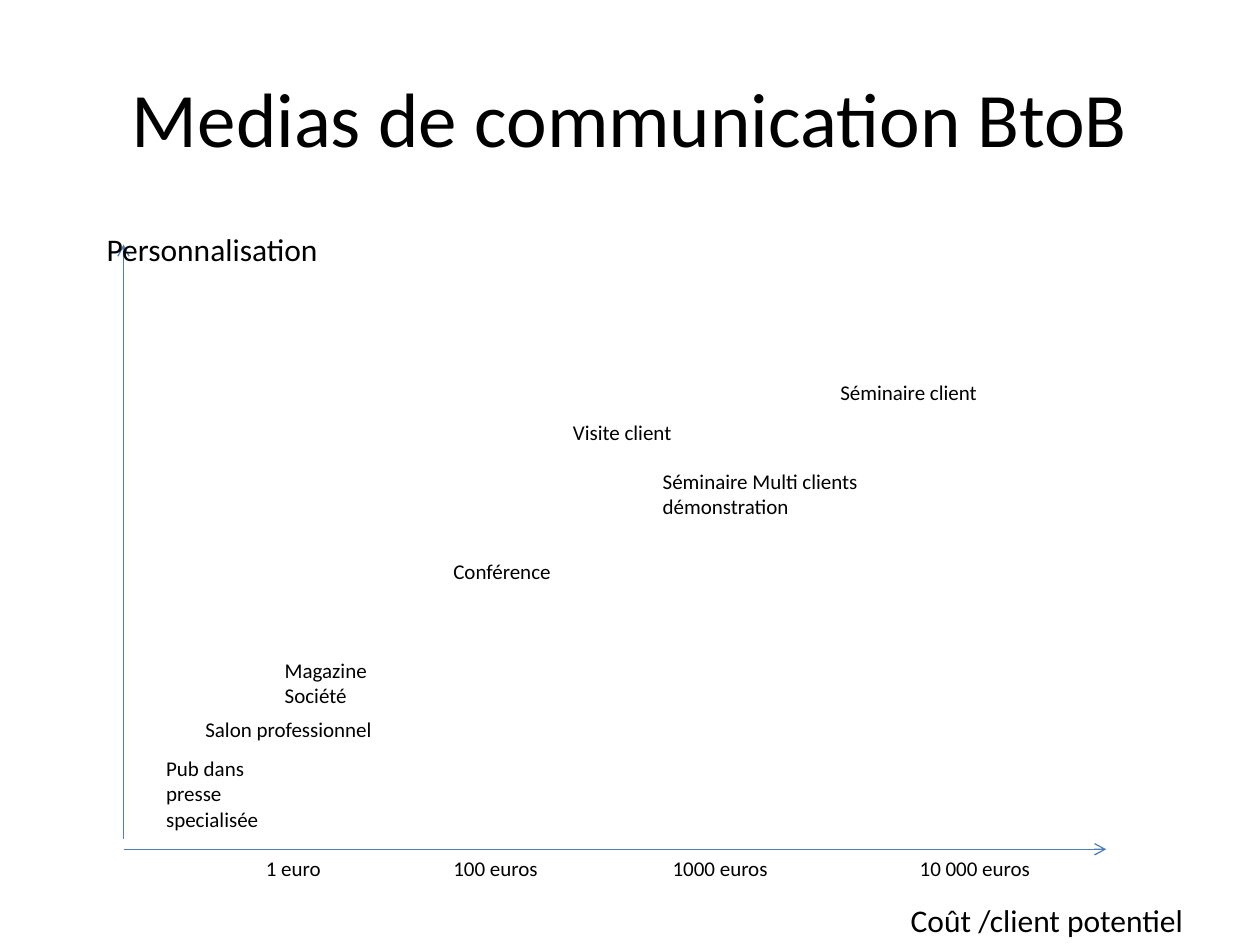
from lxml.etree import SubElement
from pptx import Presentation
from pptx.dml.color import RGBColor
from pptx.enum.shapes import MSO_CONNECTOR as Link
from pptx.enum.text import MSO_ANCHOR as Anchor, MSO_AUTO_SIZE as Fit, PP_ALIGN as Align
from pptx.oxml.ns import qn
from pptx.util import Cm, Pt


def colour(code):
    return RGBColor.from_string(code)


class MediaMap:
    font = "Calibri"
    ink = "000000"
    axis_colour = "4B7EBC"

    def __init__(self, deck):
        self.page = deck.slides.add_slide(deck.slide_layouts[6])

    def text(self, words, left, top, width, height, size):
        box = self.page.shapes.add_textbox(Cm(left), Cm(top), Cm(width), Cm(height))
        frame = box.text_frame
        frame.word_wrap = True
        frame.text = words
        for para in frame.paragraphs:
            para.font.name = self.font
            para.font.size = Pt(size)
            para.font.color.rgb = colour(self.ink)
        return frame

    def title(self, words):
        frame = self.text(words, 1.27, 0.76, 22.86, 3.18, 44)
        frame.vertical_anchor = Anchor.MIDDLE
        frame.paragraphs[0].alignment = Align.CENTER

    def label(self, words, left, top, width, height=0.76, size=12):
        self.text(words, left, top, width, height, size).auto_size = Fit.SHAPE_TO_FIT_TEXT

    def axis(self, *ends):
        line = self.page.shapes.add_connector(Link.STRAIGHT, *map(Cm, ends))
        line.line.color.rgb = colour(self.axis_colour)
        line.line.width = Pt(0.75)
        SubElement(line.line._get_or_add_ln(), qn("a:tailEnd"), type="arrow")
        SubElement(line._element.spPr, qn("a:effectLst"))


MEDIA = [
    ("Pub dans presse specialisée", 3.1, 15.11, 3.2, 1.8),
    ("Salon professionnel", 3.89, 14.33, 4.24),
    ("Magazine Société", 5.49, 13.13, 3.2, 1.3),
    ("Conférence", 8.89, 11.13, 2.72),
    ("Séminaire Multi clients\ndémonstration", 13.11, 9.32, 4.78, 1.28),
    ("Visite client", 11.3, 8.33, 2.67),
    ("Séminaire client", 16.69, 7.52, 3.53),
]
COSTS = [
    ("1 euro", 5.11, 1.73),
    ("100 euros", 8.89, 2.51),
    ("1000 euros", 13.31, 2.9),
    ("10 000 euros", 18.29, 3.23),
]
AXIS_LEFT, AXIS_BOTTOM = 2.49, 17.12


def main():
    deck = Presentation()
    deck.slide_width, deck.slide_height = Cm(25.4), Cm(19.05)
    media_map = MediaMap(deck)
    media_map.title("Medias de communication BtoB")
    media_map.axis(AXIS_LEFT, AXIS_BOTTOM, 22.3, AXIS_BOTTOM)
    media_map.axis(AXIS_LEFT, 16.92, AXIS_LEFT, 4.93)
    media_map.label("Personnalisation", 1.9, 4.52, 5.26, 1.02, 18)
    media_map.label("Coût /client potentiel", 18.11, 18.03, 6.53, 1.02, 18)
    for medium in MEDIA:
        media_map.label(*medium)
    for words, left, width in COSTS:
        media_map.label(words, left, AXIS_BOTTOM, width)
    deck.save("out.pptx")


if __name__ == "__main__":
    main()
